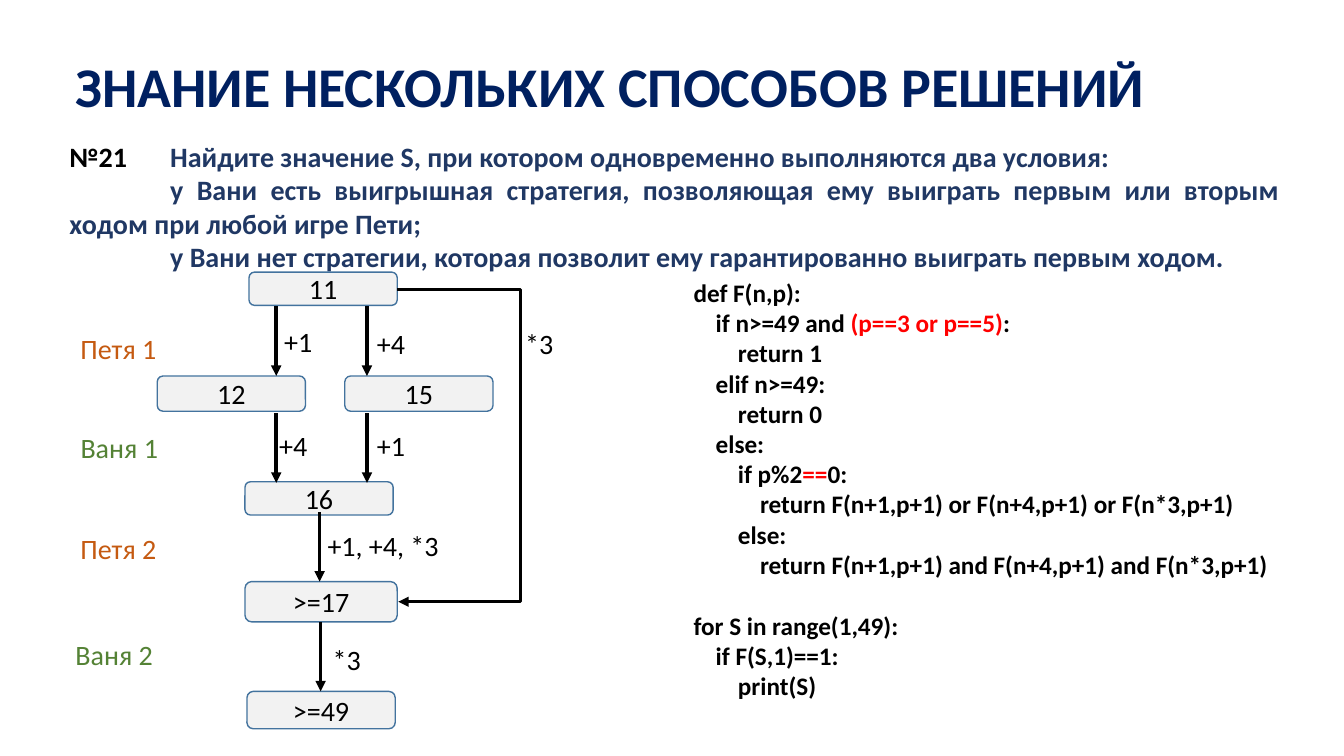
import pptx
import pptx.dml.color
import pptx.enum.shapes
import pptx.enum.text
import pptx.oxml
import pptx.oxml.ns
import pptx.util
from lxml import etree

Inches = pptx.util.Inches
Pt = pptx.util.Pt
ALIGN = pptx.enum.text.PP_ALIGN
ANCHOR = pptx.enum.text.MSO_ANCHOR
AUTO_SIZE = pptx.enum.text.MSO_AUTO_SIZE
CONNECTOR = pptx.enum.shapes.MSO_CONNECTOR
qn = pptx.oxml.ns.qn

BLACK, NAVY, BLUE, RED = "000000", "002060", "203864", "FF0000"
PETYA, VANYA = "C55A11", "548235"
BOX_FILL, BOX_LINE = "F2F2F2", "43739E"


def color(value):
    return pptx.dml.color.RGBColor.from_string(value)


def apply(target, values):
    for name, value in values.items():
        setattr(target, name, value)


class SlideBuilder:
    def __init__(self, slide, font="Calibri"):
        self.shapes = slide.shapes
        self.font = font

    def add_runs(self, paragraph, runs, size, bold=False):
        """Add (text, colour) runs to a paragraph."""
        for text, run_color in runs:
            run = paragraph.add_run()
            run.text = text
            apply(run.font, {"name": self.font, "size": Pt(size), "bold": bold})
            run.font.color.rgb = color(run_color)

    def text(self, place, paragraphs, size, bold=False, wrap=True):
        """Add a text box and return its paragraphs."""
        frame = self.shapes.add_textbox(*map(Inches, place)).text_frame
        apply(frame, {"word_wrap": wrap, "auto_size": AUTO_SIZE.SHAPE_TO_FIT_TEXT})
        for index, runs in enumerate(paragraphs):
            paragraph = frame.add_paragraph() if index else frame.paragraphs[0]
            self.add_runs(paragraph, runs, size, bold)
        return frame.paragraphs

    def label(self, left, top, text, width=0.48, text_color=BLACK):
        self.text((left, top, width, 0.44), [[(text, text_color)]], 20, wrap=False)

    def box(self, left, top, width, height, text):
        shape = self.shapes.add_shape(
            pptx.enum.shapes.MSO_SHAPE.ROUNDED_RECTANGLE,
            *map(Inches, (left, top, width, height)))
        shape.shadow.inherit = False
        shape.fill.solid()
        shape.fill.fore_color.rgb = color(BOX_FILL)
        shape.line.color.rgb = color(BOX_LINE)
        shape.line.width = Pt(1)
        shape.text_frame.vertical_anchor = ANCHOR.MIDDLE
        paragraph = shape.text_frame.paragraphs[0]
        paragraph.alignment = ALIGN.CENTER
        self.add_runs(paragraph, [(text, BLACK)], 20)

    def arrow(self, start, end, kind=CONNECTOR.STRAIGHT, bend=None):
        """Add an arrow; bend is the elbow's distance as a share of the width."""
        connector = self.shapes.add_connector(kind, *map(Inches, start + end))
        connector.line.color.rgb = color(BLACK)
        connector.line.width = Pt(2.5)
        properties = connector._element.spPr
        line = properties.find(qn("a:ln"))
        etree.SubElement(line, qn("a:tailEnd"), type="triangle")
        etree.SubElement(properties, qn("a:effectLst"))
        if bend is not None:
            geometry = properties.find(qn("a:prstGeom"))
            guides = geometry.find(qn("a:avLst"))
            if guides is None:
                guides = etree.SubElement(geometry, qn("a:avLst"))
            etree.SubElement(guides, qn("a:gd"), name="adj1",
                             fmla=f"val {round(bend * 100000)}")


def indent(paragraph, margin=0, first_line=0, tab=None):
    properties = paragraph._p.get_or_add_pPr()
    properties.set("marL", str(Inches(margin)))
    properties.set("indent", str(Inches(first_line)))
    if tab:
        tabs = etree.SubElement(properties, qn("a:tabLst"))
        etree.SubElement(tabs, qn("a:tab"), pos=str(Inches(tab)), algn="l")


def add_task(builder):
    paragraphs = builder.text((0.59, 1.33, 12.2, 1.45), [
        [("№21\t", BLACK),
         ("Найдите значение S, при котором одновременно выполняются два условия:", BLUE)],
        [("у Вани есть выигрышная стратегия, позволяющая ему выиграть первым "
          "или вторым ходом при любой игре Пети;", BLUE)],
        [("у Вани нет стратегии, которая позволит ему гарантированно выиграть "
          "первым ходом.", BLUE)],
    ], 20, bold=True)
    for paragraph in paragraphs:
        paragraph.alignment = ALIGN.JUSTIFY
    indent(paragraphs[0], tab=0.95)
    for condition in paragraphs[1:]:
        indent(condition, first_line=1)


def add_code(builder):
    loop_start = "for S in range(1,49):"
    code = [
        (0, [("def F(n,p):", BLACK)]),
        (1, [("if n>=49 and ", BLACK), ("(p==3 or p==5)", RED), (":", BLACK)]),
        (2, [("return 1", BLACK)]),
        (1, [("elif n>=49:", BLACK)]),
        (2, [("return 0", BLACK)]),
        (1, [("else:", BLACK)]),
        (2, [("if p%2", BLACK), ("==", RED), ("0:", BLACK)]),
        (3, [("return F(n+1,p+1) or F(n+4,p+1) or F(n*3,p+1)", BLACK)]),
        (2, [("else:", BLACK)]),
        (3, [("return F(n+1,p+1) and F(n+4,p+1) and F(n*3,p+1)", BLACK)]),
        (0, [(loop_start, BLACK)]),
        (1, [("if F(S,1)==1:", BLACK)]),
        (2, [("print(S)", BLACK)]),
    ]
    paragraphs = builder.text((6.78, 2.7, 6.01, 4.34),
                              [runs for _, runs in code], 18, bold=True)
    for paragraph, (level, _) in zip(paragraphs, code):
        indent(paragraph, margin=0.22 * level)
        if paragraph.text == loop_start:
            paragraph.space_before = Pt(22)


def add_game_tree(builder):
    for box in [
        (2.45, 6.86, 1.47, 0.37, ">=49"),
        (2.43, 5.77, 1.51, 0.4, ">=17"),
        (2.43, 4.78, 1.47, 0.33, "16"),
        (1.56, 3.73, 1.47, 0.35, "12"),
        (3.42, 3.73, 1.47, 0.35, "15"),
        (2.47, 2.7, 1.47, 0.33, "11"),
    ]:
        builder.box(*box)

    branches = [(x, y) for x in (2.74, 3.64) for y in (3.04, 4.1)]
    for x, y in [(3.18, 6.17), (3.17, 5.08)] + branches:
        builder.arrow((x, y), (x, y + 0.69))
    builder.arrow((3.94, 2.87), (3.95, 5.97), CONNECTOR.ELBOW, bend=124)

    for move in [
        (3.2, 6.32, "*3"),
        (5.11, 3.19, "*3"),
        (3.15, 5.19, "+1, +4, *3", 1.32),
        (3.64, 4.2, "+1"),
        (2.72, 3.17, "+1"),
        (2.67, 4.2, "+4"),
        (3.64, 3.19, "+4"),
    ]:
        builder.label(*move)

    for player in [
        (0.7, 3.24, "Петя 1", 0.96, PETYA),
        (0.7, 5.22, "Петя 2", 0.96, PETYA),
        (0.7, 4.22, "Ваня 1", 0.98, VANYA),
        (0.65, 6.28, "Ваня 2", 0.98, VANYA),
    ]:
        builder.label(*player)


def main():
    presentation = pptx.Presentation()
    apply(presentation, {"slide_width": Inches(13.33), "slide_height": Inches(7.5)})
    builder = SlideBuilder(presentation.slides.add_slide(presentation.slide_layouts[6]))
    builder.text((0.65, 0.46, 11.82, 0.77),
                 [[("ЗНАНИЕ НЕСКОЛЬКИХ СПОСОБОВ РЕШЕНИЙ", NAVY)]], 40, bold=True)
    add_task(builder)
    add_code(builder)
    add_game_tree(builder)
    presentation.save("out.pptx")


if __name__ == "__main__":
    main()
